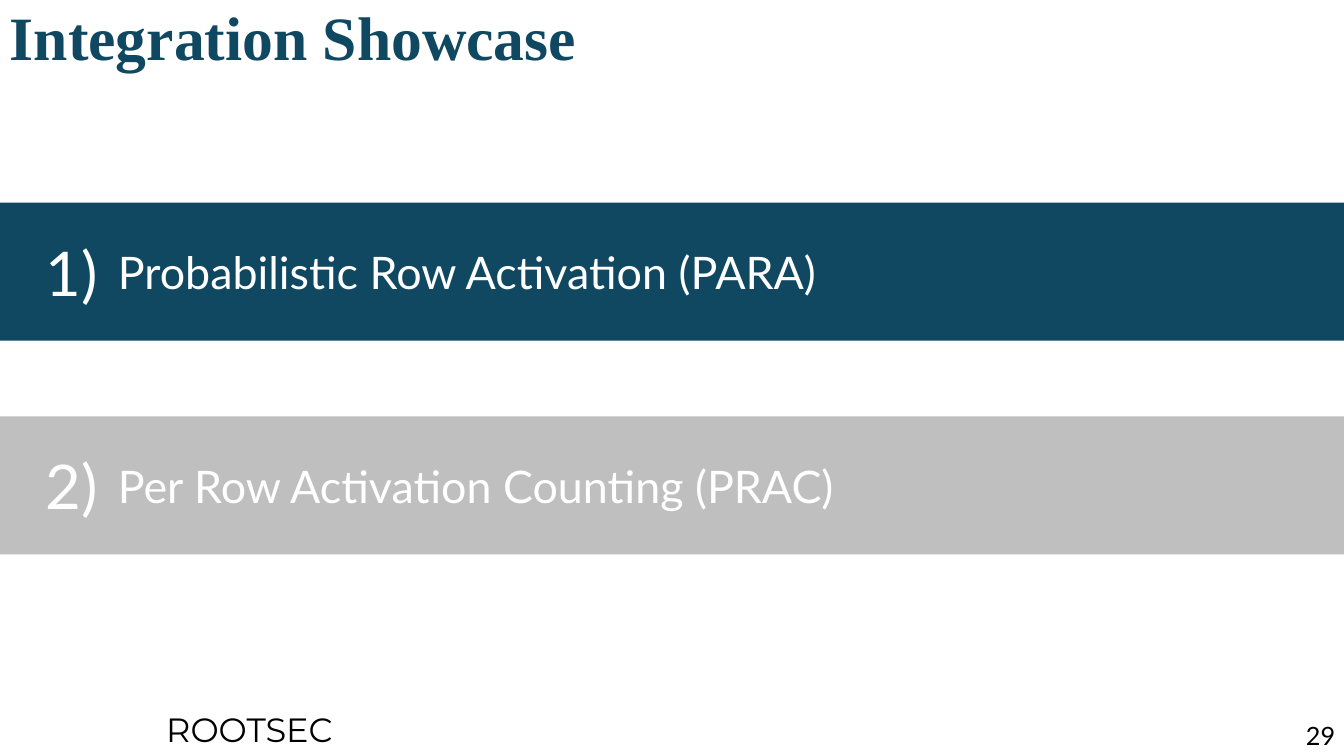
from pptx import Presentation
from pptx.dml.color import RGBColor
from pptx.enum.shapes import MSO_SHAPE
from pptx.enum.text import MSO_ANCHOR, PP_ALIGN
from pptx.util import Inches, Pt

NAVY = RGBColor(0x10, 0x48, 0x62)
GREY = RGBColor(0xBF, 0xBF, 0xBF)
WHITE = RGBColor(0xFF, 0xFF, 0xFF)
BLACK = RGBColor(0, 0, 0)

WIDTH, HEIGHT = 13.33, 7.5
BAND_TOP, BAND_HEIGHT, BAND_PITCH = 2.01, 1.37, 2.12
BANDS = [("Probabilistic Row Activation (PARA)", NAVY),
         ("Per Row Activation Counting (PRAC)", GREY)]


def add_text(s, box, text, size, color, name="Lato", bold=False,
             wrap=True, **layout):
    """Place one line of text; layout holds paragraph format values."""
    tf = s.shapes.add_textbox(*map(Inches, box)).text_frame
    tf.word_wrap = wrap
    tf.vertical_anchor = MSO_ANCHOR.MIDDLE
    p = tf.paragraphs[0]
    for key, value in layout.items():
        setattr(p, key, value)
    r = p.add_run()
    r.text = text
    for key, value in dict(name=name, size=Pt(size), bold=bold).items():
        setattr(r.font, key, value)
    r.font.color.rgb = color


def add_band(s, box, number, text, fill):
    left, top, width, height = box
    sp = s.shapes.add_shape(MSO_SHAPE.RECTANGLE, *map(Inches, box))
    sp.shadow.inherit = False
    sp.fill.solid()
    sp.fill.fore_color.rgb = fill
    sp.line.fill.background()
    add_text(s, (left + 0.23, top, 0.96, height), f"{number})", 44, WHITE,
             alignment=PP_ALIGN.CENTER)
    add_text(s, (left + 1.07, top, width - 4.12, height), text, 32, WHITE)


def add_footer(s, box):
    left, top, width, height = box
    add_text(s, (left + 1.55, top, 1.91, height), "ROOTSEC", 24, BLACK,
             "Montserrat", wrap=False)
    add_text(s, (left + width - 0.74, top + 0.12, 0.75, 0.4), "29", 18, BLACK,
             alignment=PP_ALIGN.RIGHT)


def main():
    prs = Presentation()
    prs.slide_width, prs.slide_height = Inches(WIDTH), Inches(HEIGHT)
    s = prs.slides.add_slide(prs.slide_layouts[6])
    add_text(s, (0, 0, WIDTH, 0.8), "Integration Showcase", 44, NAVY,
             "Times New Roman", bold=True, line_spacing=0.9)
    for i, (text, fill) in enumerate(BANDS):
        top = BAND_TOP + i * BAND_PITCH
        add_band(s, (0, top, WIDTH, BAND_HEIGHT), i + 1, text, fill)
    add_footer(s, (0, 6.98, WIDTH, 0.5))
    prs.save("out.pptx")


if __name__ == "__main__":
    main()
